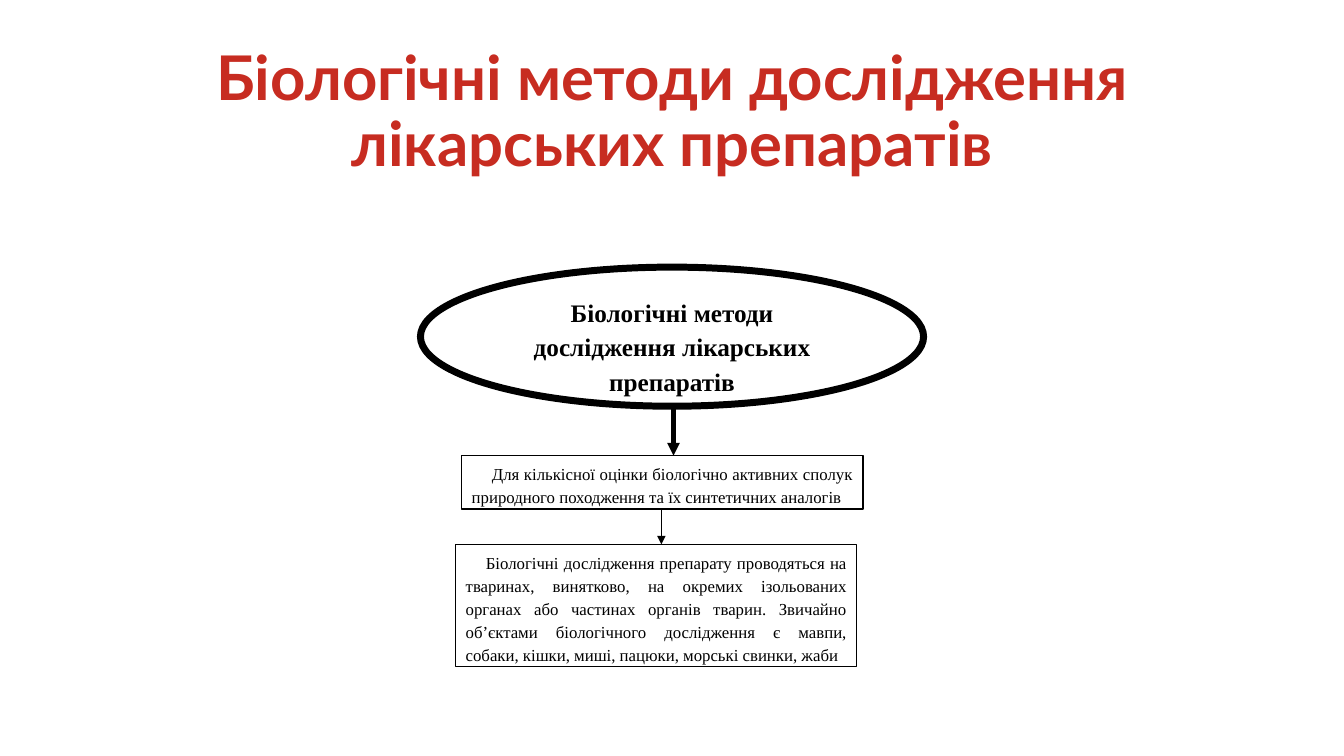
"""Build the slide on biological methods of drug research."""
from pptx import Presentation
from pptx.dml.color import RGBColor
from pptx.enum.shapes import MSO_CONNECTOR as Link, MSO_SHAPE as Form
from pptx.enum.text import MSO_ANCHOR as Anchor, PP_ALIGN as Align
from pptx.oxml.ns import qn
from pptx.util import Inches, Pt
from lxml.etree import SubElement


def color(part, tone):
    part.solid()
    part.fore_color.rgb = RGBColor.from_string(tone)


def write(shape, text, anchor, tone, para, font):
    frame = shape.text_frame
    frame.word_wrap = True
    frame.vertical_anchor = anchor
    line = frame.paragraphs[0]
    line.text = text
    for key, value in para.items():
        setattr(line, key, value)
    for key, value in font.items():
        setattr(line.font, key, value)
    color(line.font.fill, tone)
    return line


deck = Presentation()
deck.slide_width, deck.slide_height = Inches(13.33), Inches(7.5)
slide = deck.slides.add_slide(deck.slide_layouts[6])
shapes = slide.shapes

topic = "Біологічні методи дослідження лікарських препаратів"
title = shapes.add_textbox(Inches(0.92), Inches(0.4), Inches(11.5), Inches(1.45))
write(title, topic, Anchor.MIDDLE, "C72C21",
      {"alignment": Align.CENTER, "line_spacing": 0.9},
      {"name": "Lato", "size": Pt(44), "bold": True})

head = {"alignment": Align.CENTER, "line_spacing": 1.15}
body = {"alignment": Align.JUSTIFY, "line_spacing": 1.15}
bold = {"name": "Times New Roman", "size": Pt(18), "bold": True}
plain = {"name": "Times New Roman", "size": Pt(12), "bold": False}

goal = "Для кількісної оцінки біологічно активних сполук природного походження та їх синтетичних аналогів"
tests = ("Біологічні дослідження препарату проводяться на тваринах, винятково, "
         "на окремих ізольованих органах або частинах органів тварин. Звичайно "
         "обʼєктами біологічного дослідження є мавпи, собаки, кішки, миші, "
         "пацюки, морські свинки, жаби")

nodes = [
    (Form.OVAL, (4.17, 2.65, 4.99, 1.38), 5, topic, head, bold, 0),
    (Form.RECTANGLE, (4.58, 4.52, 3.98, 0.53), 1, goal, body, plain, 0.2),
    (Form.RECTANGLE, (4.52, 5.4, 3.98, 1.21), 0.75, tests, body, plain, 0.2),
]
for form, place, width, text, para, font, indent in nodes:
    node = shapes.add_shape(form, *map(Inches, place))
    node.shadow.inherit = False
    color(node.fill, "FFFFFF")
    color(node.line.fill, "000000")
    node.line.width = Pt(width)
    line = write(node, text, Anchor.TOP, "000000", para, font)
    line._p.get_or_add_pPr().set("indent", str(Inches(indent)))

for x, top, end, width in [(6.68, 4.02, 4.52, 3), (6.56, 5.05, 5.4, 0.25)]:
    arrow = shapes.add_connector(Link.STRAIGHT, Inches(x), Inches(top), Inches(x), Inches(end))
    color(arrow.line.fill, "000000")
    arrow.line.width = Pt(width)
    SubElement(arrow.line._get_or_add_ln(), qn("a:tailEnd"), type="triangle")
    SubElement(arrow._element.spPr, qn("a:effectLst"))

deck.save("out.pptx")
